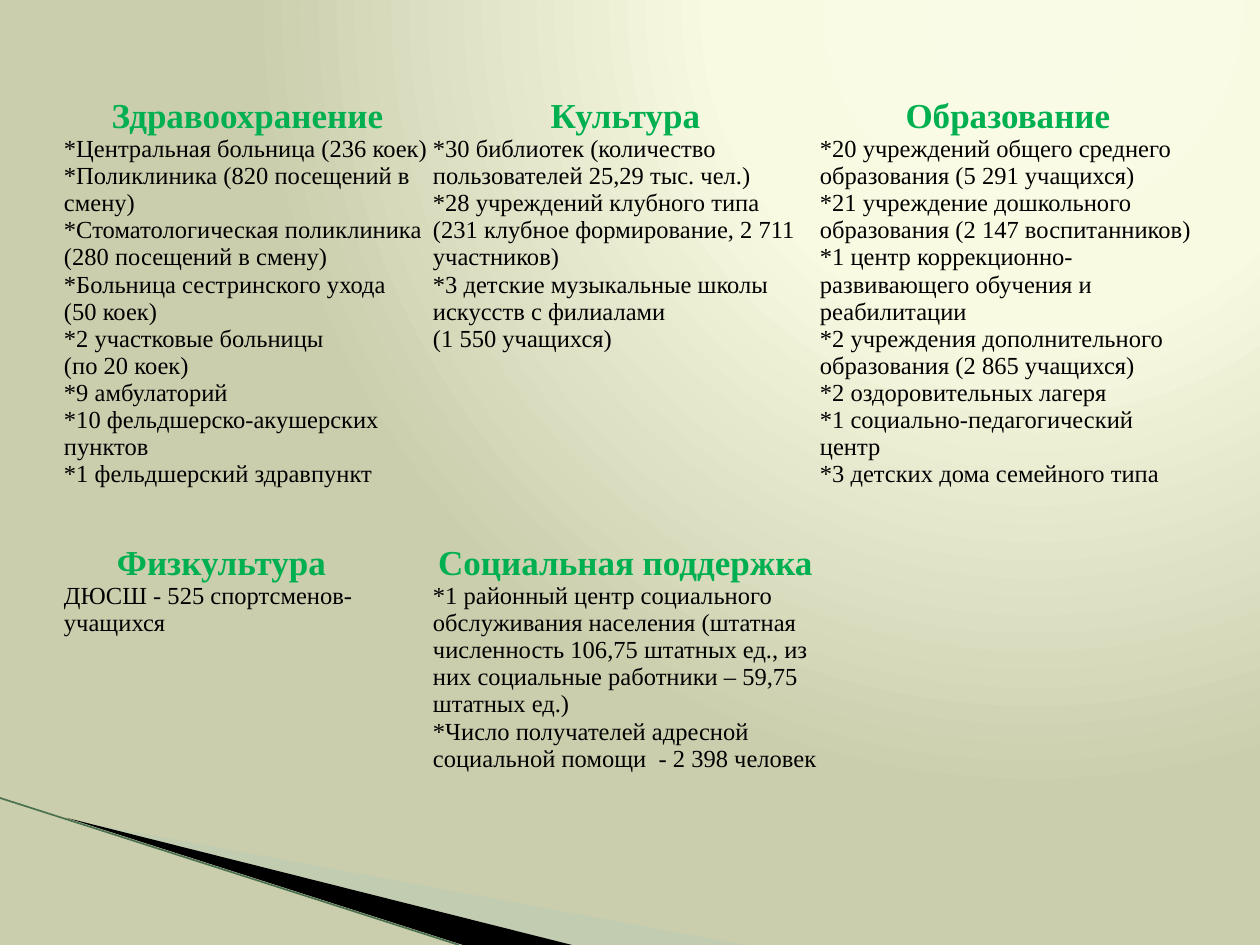
from dataclasses import dataclass

from pptx import Presentation
from pptx import oxml
from pptx import util as u
from pptx.dml import color
from pptx.enum import shapes, text
from pptx.oxml import ns


@dataclass(frozen=True)
class Theme:
    font: str = "Times New Roman"
    heading_size: int = 20
    body_size: int = 14
    heading: str = "00B050"
    body: str = "000000"
    glow: tuple = ((0, "F9FBE7"), (40, "F8FAE2"), (100, "CBCEAD"))
    pale_wedge: str = "B3CBB5"
    dark_wedge: str = "000000"
    edge: str = "4A7050"
    edge_width: float = 0.95


theme = Theme()
PX = 914400 / 126
DRAWING = ns.nsdecls("a")
NO_STYLE = "{2D5ABB26-0587-4C30-8999-92F81FD0307C}"


def px(count):
    return u.Emu(round(count * PX))


def write(paragraph, content, size=theme.body_size, ink=theme.body, bold=False,
          align=text.PP_ALIGN.LEFT, indent=0):
    if indent:
        paragraph._p.get_or_add_pPr().set("indent", str(px(indent)))
    paragraph.alignment = align
    run = paragraph.add_run()
    run.text = content
    run.font.name = theme.font
    run.font.size = u.Pt(size)
    run.font.bold = bold
    run.font.color.rgb = color.RGBColor.from_string(ink)


presentation = Presentation()
presentation.slide_width = px(1260)
presentation.slide_height = px(945)
slide = presentation.slides.add_slide(presentation.slide_layouts[6])

slide.background.fill.solid()
background = slide.background._cSld.bg.bgPr
stops = "".join(
    f'<a:gs pos="{place * 1000}"><a:srgbClr val="{value}"/></a:gs>'
    for place, value in theme.glow
)
gradient = oxml.parse_xml(
    f'<a:gradFill {DRAWING} rotWithShape="1"><a:gsLst>{stops}</a:gsLst>'
    '<a:path path="circle"><a:fillToRect l="65000" t="0" r="0" b="98000"/></a:path>'
    "</a:gradFill>"
)
background.replace(background[0], gradient)

wedges = [
    (theme.pale_wedge, 40, [(69, 820), (745, 945), (570, 945)]),
    (theme.dark_wedge, 100, [(67, 818), (572, 945), (463, 945)]),
]
for ink, opacity, corners in wedges:
    builder = slide.shapes.build_freeform(*corners[0], scale=PX)
    builder.add_line_segments(corners[1:], close=True)
    wedge = builder.convert_to_shape()
    wedge.shadow.inherit = False
    wedge.fill.solid()
    wedge.fill.fore_color.rgb = color.RGBColor.from_string(ink)
    wedge.line.fill.background()
    if opacity < 100:
        tint = wedge._element.spPr.find(f".//{ns.qn('a:srgbClr')}")
        tint.append(oxml.parse_xml(f'<a:alpha {DRAWING} val="{opacity * 1000}"/>'))

edge = slide.shapes.add_connector(
    shapes.MSO_CONNECTOR.STRAIGHT, px(0), px(798), px(459), px(945)
)
edge.line.color.rgb = color.RGBColor.from_string(theme.edge)
edge.line.width = u.Pt(theme.edge_width)
edge._element.spPr.append(oxml.parse_xml(f"<a:effectLst {DRAWING}/>"))

sectors = [
    [
        ("Здравоохранение", [
            "*Центральная больница (236 коек)",
            "*Поликлиника (820 посещений в смену)",
            "*Стоматологическая поликлиника (280 посещений в смену)",
            "*Больница сестринского ухода",
            "(50 коек)",
            "*2 участковые больницы",
            "(по 20 коек)",
            "*9 амбулаторий",
            "*10 фельдшерско-акушерских пунктов",
            "*1 фельдшерский здравпункт",
        ]),
        ("Культура", [
            "*30 библиотек (количество пользователей 25,29 тыс. чел.)",
            "*28 учреждений клубного типа",
            "(231 клубное формирование, 2 711 участников)",
            "*3 детские музыкальные школы искусств с филиалами",
            "(1 550 учащихся)",
        ]),
        ("Образование", [
            "*20 учреждений общего среднего образования (5 291 учащихся)",
            "*21 учреждение дошкольного образования (2 147 воспитанников)",
            "*1 центр коррекционно-развивающего обучения и реабилитации",
            "*2 учреждения дополнительного образования (2 865 учащихся)",
            "*2 оздоровительных лагеря",
            "*1 социально-педагогический центр",
            "*3 детских дома семейного типа",
        ]),
    ],
    [
        ("Физкультура", ["ДЮСШ - 525 спортсменов-учащихся"]),
        ("Социальная поддержка", [
            "*1 районный центр социального обслуживания населения (штатная "
            "численность 106,75 штатных ед., из них социальные работники – "
            "59,75 штатных ед.)",
            "*Число получателей адресной социальной помощи  - 2 398 человек",
        ]),
    ],
]
column_widths = [369, 387, 378]
row_heights = [447, 340]
frame = slide.shapes.add_table(
    len(row_heights), len(column_widths), px(63), px(96),
    px(sum(column_widths)), px(sum(row_heights)),
)
table = frame.table
table.first_row = False
table.horz_banding = False
table._tbl.tblPr.find(ns.qn("a:tableStyleId")).text = NO_STYLE
for column, width in zip(table.columns, column_widths):
    column.width = px(width)
for row, height in zip(table.rows, row_heights):
    row.height = px(height)
for cell in table.iter_cells():
    cell.fill.background()
    cell.margin_left = cell.margin_right = cell.margin_top = px(1)
    cell.margin_bottom = 0

for row_index, row_sectors in enumerate(sectors):
    for column_index, (heading, facts) in enumerate(row_sectors):
        text_frame = table.cell(row_index, column_index).text_frame
        indented = heading == "Физкультура"
        write(
            text_frame.paragraphs[0], heading, size=theme.heading_size,
            ink=theme.heading, bold=True, indent=53 if indented else 0,
            align=text.PP_ALIGN.LEFT if indented else text.PP_ALIGN.CENTER,
        )
        for fact in facts:
            write(text_frame.add_paragraph(), fact)

presentation.save("out.pptx")
